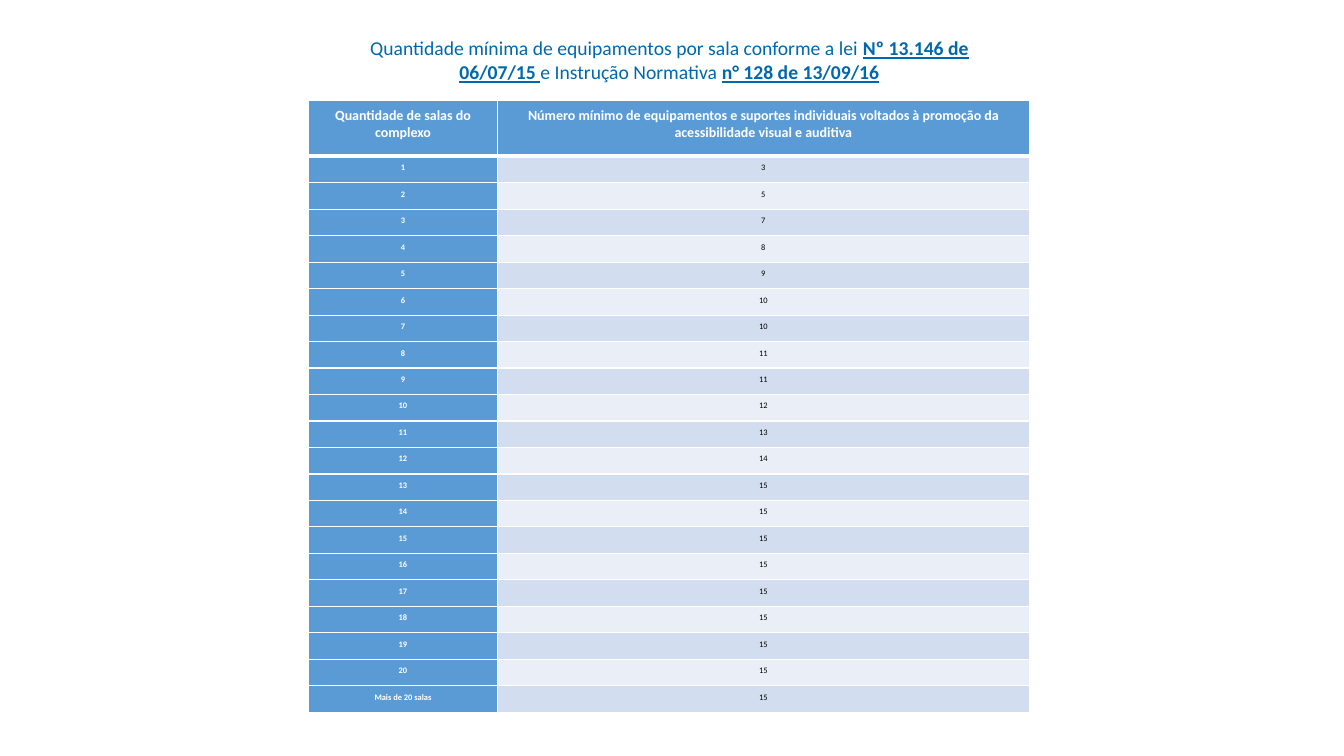
from dataclasses import dataclass

from lxml.etree import SubElement
from pptx import Presentation
from pptx.dml.color import RGBColor
from pptx.enum.text import MSO_ANCHOR as Anchor, MSO_AUTO_SIZE as AutoSize, PP_ALIGN as Align
from pptx.oxml.ns import qn
from pptx.util import Cm, Pt

COLOURS = {
    "title": "0068AC",
    "header": "5B9BD5",
    "band_dark": "D2DEEF",
    "band_light": "EAEFF7",
    "white": "FFFFFF",
    "black": "000000",
}
FONT = "Calibri"

TABLE_HEIGHT, HEADER_HEIGHT = 15.42, 1.4
COLUMN_WIDTHS = (4.75, 13.41)
CELL_MARGIN = Cm(0.16)
THIN, THICK = 1, 3

HEADINGS = (
    "Quantidade de salas do complexo",
    "Número mínimo de equipamentos e suportes individuais voltados à promoção da "
    "acessibilidade visual e auditiva",
)
ROOMS = [str(number) for number in range(1, 21)] + ["Mais de 20 salas"]
EQUIPMENT = [3, 5, 7, 8, 9, 10, 10, 11, 11, 12, 13, 14] + [15] * 9


@dataclass
class Wording:
    text: str
    size: float
    colour: str
    bold: bool = False
    underline: bool = False


@dataclass
class CellLook:
    wording: Wording
    fill: str
    top: float = THIN
    bottom: float = THIN


TITLE_WORDINGS = [
    Wording("Quantidade mínima de equipamentos por sala conforme a lei ", 14, "title"),
    Wording("Nº 13.146 de 06/07/15 ", 14, "title", True, True),
    Wording("e Instrução Normativa ", 14, "title"),
    Wording("n° 128 de 13/09/16", 14, "title", True, True),
]


def add_text(para, wordings: list[Wording]) -> None:
    para.alignment = Align.CENTER
    for wording in wordings:
        run = para.add_run()
        run.text = wording.text
        font = run.font
        font.name, font.size = FONT, Pt(wording.size)
        font.bold, font.underline = wording.bold, wording.underline
        font.color.rgb = RGBColor.from_string(COLOURS[wording.colour])


def add_borders(cell, look: CellLook) -> None:
    properties = cell._tc.get_or_add_tcPr()
    widths = {"lnL": THIN, "lnR": THIN, "lnT": look.top, "lnB": look.bottom}
    for side, width in widths.items():
        line = SubElement(properties, qn(f"a:{side}"), w=str(Pt(width)))
        fill = SubElement(line, qn("a:solidFill"))
        SubElement(fill, qn("a:srgbClr"), val=COLOURS["white"])


def format_cell(cell, look: CellLook) -> None:
    cell.margin_left = cell.margin_right = CELL_MARGIN
    cell.margin_top = cell.margin_bottom = CELL_MARGIN
    cell.vertical_anchor = Anchor.TOP
    add_borders(cell, look)
    cell.fill.solid()
    cell.fill.fore_color.rgb = RGBColor.from_string(COLOURS[look.fill])
    add_text(cell.text_frame.paragraphs[0], [look.wording])


def table_looks() -> list[list[CellLook]]:
    rows = [[CellLook(Wording(text, 10, "white", True), "header", bottom=THICK)
             for text in HEADINGS]]
    for index, (rooms, amount) in enumerate(zip(ROOMS, EQUIPMENT)):
        top = THIN if index else THICK
        band = "band_light" if index % 2 else "band_dark"
        rows.append([
            CellLook(Wording(rooms, 6, "white", True), "header", top),
            CellLook(Wording(str(amount), 6, "black"), band, top),
        ])
    return rows


def add_title(page) -> None:
    box = page.shapes.title
    box.left, box.top, box.width, box.height = Cm(8.26), Cm(0.79), Cm(17.22), Cm(1.12)
    frame = box.text_frame
    frame.word_wrap = True
    frame.auto_size = AutoSize.NONE
    frame.vertical_anchor = Anchor.TOP
    para = frame.paragraphs[0]
    para.line_spacing = 1.0
    para.space_before = Pt(0)
    add_text(para, TITLE_WORDINGS)


def add_equipment_table(page) -> None:
    looks = table_looks()
    table = page.shapes.add_table(
        len(looks), len(COLUMN_WIDTHS), Cm(7.78), Cm(2.54),
        Cm(sum(COLUMN_WIDTHS)), Cm(TABLE_HEIGHT)).table
    table.horz_banding = False
    table.first_col = True

    # Column and row sizes
    for column, width in zip(table.columns, COLUMN_WIDTHS):
        column.width = Cm(width)
    row_height = (TABLE_HEIGHT - HEADER_HEIGHT) / len(ROOMS)
    for index, row in enumerate(table.rows):
        row.height = Cm(row_height if index else HEADER_HEIGHT)

    # Cell contents
    for row, row_looks in zip(table.rows, looks):
        for cell, look in zip(row.cells, row_looks):
            format_cell(cell, look)


def main() -> None:
    deck = Presentation()
    deck.slide_width, deck.slide_height = Cm(33.87), Cm(19.05)
    page = deck.slides.add_slide(deck.slide_layouts.get_by_name("Title Only"))
    add_title(page)
    add_equipment_table(page)
    deck.save("out.pptx")


if __name__ == "__main__":
    main()
